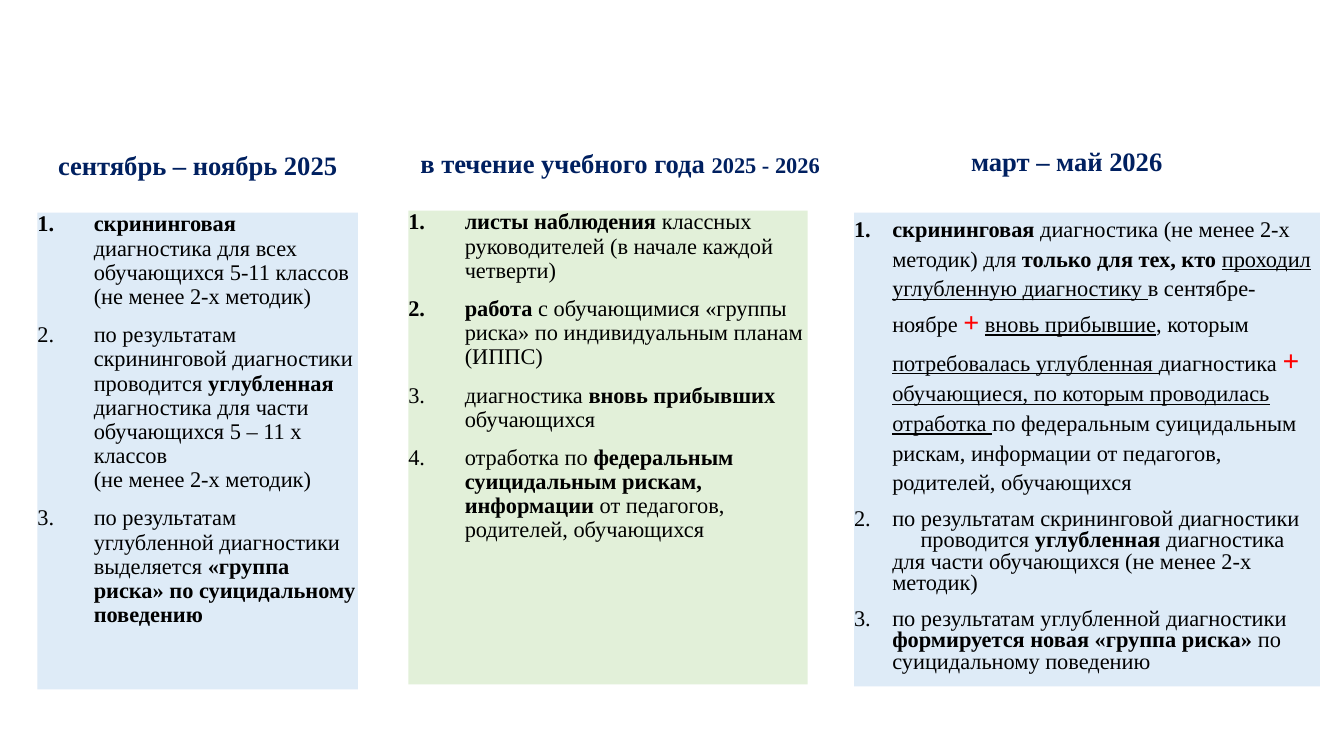
from dataclasses import dataclass
from typing import NamedTuple

import lxml.etree
import pptx
import pptx.dml.color
import pptx.enum.shapes
import pptx.enum.text
import pptx.oxml.ns
import pptx.util

Inches = pptx.util.Inches
Pt = pptx.util.Pt
RGB = pptx.dml.color.RGBColor.from_string
ALIGN = pptx.enum.text.PP_ALIGN


@dataclass(frozen=True)
class Theme:
    font: str = "Times New Roman"
    text: str = "000000"
    heading: str = "002060"
    accent: str = "FF0000"
    blue: str = "DEEBF7"
    green: str = "E2F0D9"
    body_size: int = 16
    heading_size: int = 19
    plus_size: int = 20
    gap: int = 10


THEME = Theme()


class Span(NamedTuple):
    text: str
    bold: bool = False
    underline: bool = False
    color: str = THEME.text
    size: int = THEME.body_size


class Box(NamedTuple):
    left: float
    top: float
    width: float
    height: float


class Item(NamedTuple):
    spans: list[Span]
    spacing: float = 0.9
    tab: float | None = None


@dataclass
class Column:
    heading: list[Span]
    heading_box: Box
    heading_spacing: float
    card: Box
    fill: str
    indent: float
    items: list[Item]


def bold(text: str) -> Span:
    return Span(text, bold=True)


def under(text: str) -> Span:
    return Span(text, underline=True)


def head(text: str, size: int = THEME.heading_size) -> Span:
    return Span(text, True, False, THEME.heading, size)


def plus(size: int = THEME.plus_size) -> Span:
    return Span("+", True, False, THEME.accent, size)


# Content of the three periods
COLUMNS = [
    Column([head("сентябрь – ноябрь 2025")], Box(0.12, 1.51, 3.68, 0.42), 0.9,
           Box(0.37, 2.11, 3.18, 4.73), THEME.blue, 0.56, [
        Item([bold("скрининговая"),
              Span(" диагностика для всех обучающихся 5-11 классов\v(не менее 2-х методик)")]),
        Item([Span("по результатам скрининговой диагностики проводится "),
              bold("углубленная"),
              Span(" диагностика для части обучающихся 5 – 11 х классов\v(не менее 2-х методик)")]),
        Item([Span("по результатам углубленной диагностики выделяется "),
              bold("«группа риска» по суицидальному поведению")]),
    ]),
    Column([head("в течение учебного года "), head("2025 - 2026", THEME.body_size)],
           Box(3.96, 1.43, 4.38, 0.5), 1.1,
           Box(4.05, 2.09, 3.96, 4.7), THEME.green, 0.56, [
        Item([bold("листы наблюдения "),
              Span("классных руководителей (в начале каждой четверти)")]),
        Item([bold("работа"),
              Span(" с обучающимися «группы риска» по индивидуальным планам (ИППС)")]),
        Item([Span("диагностика "), bold("вновь прибывших"), Span(" обучающихся")]),
        Item([Span("отработка по "),
              bold("федеральным суицидальным рискам, информации "),
              Span("от педагогов, родителей, обучающихся")]),
    ]),
    Column([head("март – май 2026")], Box(8.77, 1.41, 3.62, 0.5), 1.1,
           Box(8.47, 2.11, 4.62, 4.7), THEME.blue, 0.38, [
        Item([bold("скрининговая"), Span(" диагностика (не менее 2-х методик) для "),
              bold("только для тех, кто "), under("проходил углубленную диагностику "),
              Span("в сентябре-ноябре "), plus(), Span(" "), under("вновь прибывшие"),
              Span(", которым "), under("потребовалась углубленная "),
              Span("диагностика "), plus(21), Span(" "),
              under("обучающиеся, по которым проводилась отработка "),
              Span("по федеральным суицидальным рискам, информации от педагогов, "
                   "родителей, обучающихся")], 1.1),
        Item([Span("по результатам скрининговой диагностики\v\tпроводится "),
              bold("углубленная"),
              Span(" диагностика для части обучающихся (не менее 2-х методик)")], 0.8, 0.66),
        Item([Span("по результатам углубленной диагностики "),
              bold("формируется новая «группа риска» "),
              Span("по суицидальному поведению")], 0.8),
    ]),
]


def place(s, box: Box) -> None:
    for name, value in box._asdict().items():
        setattr(s, name, Inches(value))


def prepare(tf) -> None:
    frame_format = {
        "word_wrap": True,
        "auto_size": pptx.enum.text.MSO_AUTO_SIZE.NONE,
        "vertical_anchor": pptx.enum.text.MSO_ANCHOR.TOP,
        "margin_left": 0, "margin_top": 0, "margin_right": 0, "margin_bottom": 0,
    }
    for name, value in frame_format.items():
        setattr(tf, name, value)


def add_spans(p, spans: list[Span]) -> None:
    for span in spans:
        for i, line in enumerate(span.text.split("\v")):
            if i:
                p.add_line_break()
            r = p.add_run()
            r.text = line
            run_format = {"name": THEME.font, "size": Pt(span.size),
                          "bold": span.bold, "underline": span.underline}
            for name, value in run_format.items():
                setattr(r.font, name, value)
            r.font.color.rgb = RGB(span.color)


def number(p, indent: float, tab: float | None) -> None:
    qn = pptx.oxml.ns.qn
    pPr = p._p.get_or_add_pPr()
    pPr.set("marL", str(Inches(indent)))
    pPr.set("indent", str(-Inches(indent)))
    lxml.etree.SubElement(pPr, qn("a:buFont"), typeface="+mj-lt")
    lxml.etree.SubElement(pPr, qn("a:buAutoNum"), type="arabicPeriod")
    if tab is not None:
        tabs = lxml.etree.SubElement(pPr, qn("a:tabLst"))
        lxml.etree.SubElement(tabs, qn("a:tab"), pos=str(Inches(tab)), algn="l")


def draw_heading(slide, column: Column) -> None:
    s = slide.shapes.add_textbox(0, 0, 0, 0)
    place(s, column.heading_box)
    prepare(s.text_frame)
    p = s.text_frame.paragraphs[0]
    p.alignment = ALIGN.CENTER
    p.line_spacing = column.heading_spacing
    add_spans(p, column.heading)


def draw_list(s, column: Column) -> None:
    place(s, column.card)
    s.fill.solid()
    s.fill.fore_color.rgb = RGB(column.fill)
    s.line.fill.background()
    tf = s.text_frame
    prepare(tf)
    for i, item in enumerate(column.items):
        p = tf.add_paragraph() if i else tf.paragraphs[0]
        number(p, column.indent, item.tab)
        p.alignment = ALIGN.LEFT
        p.line_spacing = item.spacing
        p.space_before = Pt(THEME.gap if i else 0)
        add_spans(p, item.spans)


def main() -> None:
    prs = pptx.Presentation()
    prs.slide_width, prs.slide_height = Inches(13.33), Inches(7.5)
    slide = prs.slides.add_slide(prs.slide_layouts[1])
    title = slide.shapes.title._element
    title.getparent().remove(title)

    # The first list fills the body placeholder, the others are rectangles
    for i, column in enumerate(COLUMNS):
        if i == 0:
            s = slide.placeholders[1]
        else:
            s = slide.shapes.add_shape(pptx.enum.shapes.MSO_SHAPE.RECTANGLE, 0, 0, 0, 0)
            s.shadow.inherit = False
        draw_list(s, column)
        draw_heading(slide, column)
    prs.save("out.pptx")


if __name__ == "__main__":
    main()
